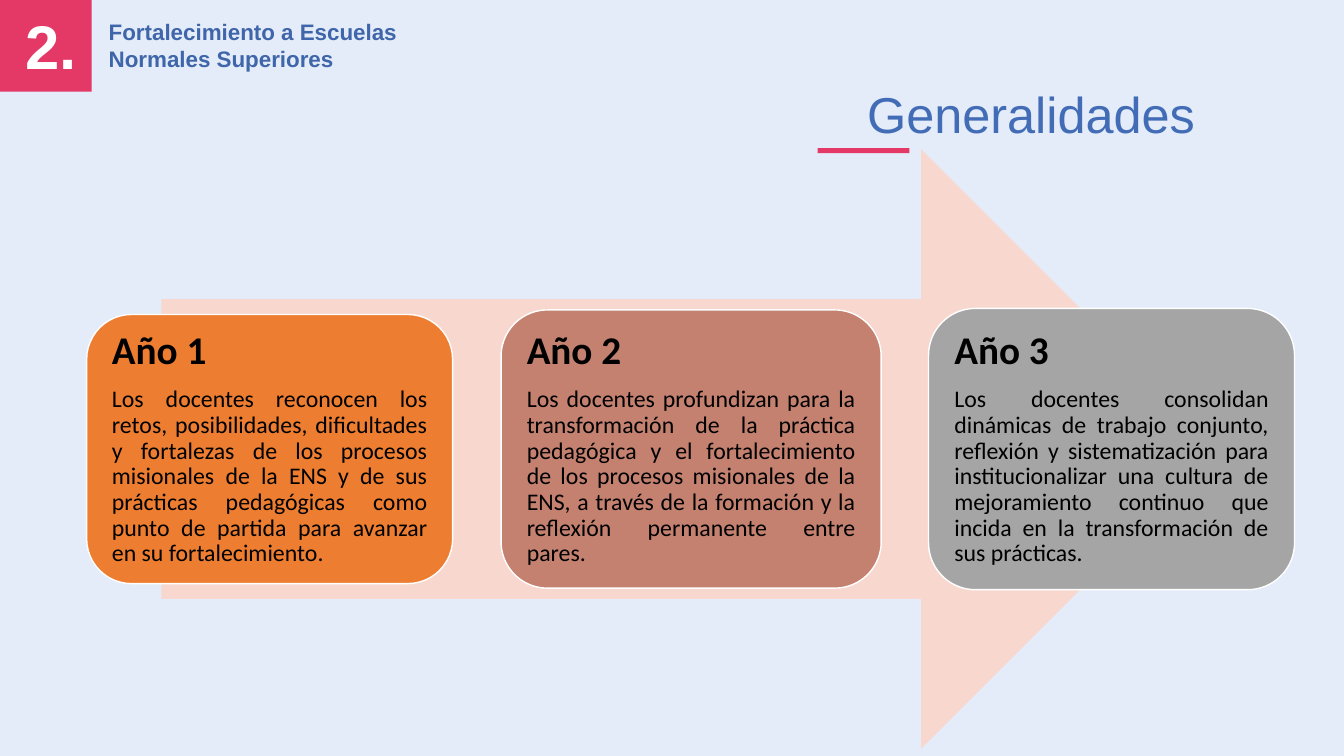
import pptx
import pptx.util
import pptx.dml.color
import pptx.enum.shapes
import pptx.enum.text

Inches, Pt = pptx.util.Inches, pptx.util.Pt
RGBColor = pptx.dml.color.RGBColor
Shape = pptx.enum.shapes.MSO_SHAPE
Align = pptx.enum.text.PP_ALIGN
Anchor = pptx.enum.text.MSO_ANCHOR

SKY = RGBColor(0xE3, 0xEC, 0xF8)
PINK = RGBColor(0xE4, 0x38, 0x66)
BLUE = RGBColor(0x43, 0x6C, 0xB7)
NAVY = RGBColor(0x3F, 0x65, 0xAA)
PEACH = RGBColor(0xF8, 0xD7, 0xCE)
ORANGE = RGBColor(0xED, 0x7D, 0x31)
CLAY = RGBColor(0xC4, 0x81, 0x70)
GREY = RGBColor(0xA5, 0xA5, 0xA5)
WHITE = RGBColor(0xFF, 0xFF, 0xFF)
BLACK = RGBColor(0, 0, 0)

TITLE = "Generalidades"
NUMBER = "2."
TOPIC = "Fortalecimiento a Escuelas Normales Superiores"
# heading, body, fill, left, width, height
YEARS = [
    ("Año 1",
     "Los docentes reconocen los retos, posibilidades, dificultades y "
     "fortalezas de los procesos misionales de la ENS y de sus prácticas "
     "pedagógicas como punto de partida para avanzar en su fortalecimiento.",
     ORANGE, 0.86, 3.63, 2.67),
    ("Año 2",
     "Los docentes profundizan para la transformación de la práctica "
     "pedagógica y el fortalecimiento de los procesos misionales de la ENS, "
     "a través de la formación y la reflexión permanente entre pares.",
     CLAY, 4.97, 3.77, 2.76),
    ("Año 3",
     "Los docentes consolidan dinámicas de trabajo conjunto, reflexión y "
     "sistematización para institucionalizar una cultura de mejoramiento "
     "continuo que incida en la transformación de sus prácticas.",
     GREY, 9.21, 3.63, 2.79),
]
ARROW = (1.6, 1.48, 10.51, 5.95)
MIDDLE = ARROW[1] + ARROW[3] / 2


def style(par, name, size, color, bold=False):
    font = par.font
    font.name, font.size, font.bold = name, Pt(size), bold
    font.color.rgb = color


def draw(slide, kind, box, fill):
    shape = slide.shapes.add_shape(kind, *map(Inches, box))
    shape.shadow.inherit = False
    shape.fill.solid()
    shape.fill.fore_color.rgb = fill
    shape.line.fill.background()
    return shape


def label(slide, box, text, size, color):
    frame = slide.shapes.add_textbox(*map(Inches, box)).text_frame
    frame.word_wrap = True
    frame.text = text
    style(frame.paragraphs[0], "Arial", size, color, True)


def card(slide, head, body, fill, left, width, height):
    """Draw one year, centred on the arrow's axis."""
    box = (left, MIDDLE - height / 2, width, height)
    shape = draw(slide, Shape.ROUNDED_RECTANGLE, box, fill)
    shape.line.color.rgb = WHITE
    shape.line.width = Pt(1)
    frame = shape.text_frame
    frame.word_wrap = True
    frame.vertical_anchor = Anchor.MIDDLE
    frame.margin_left = frame.margin_right = Inches(0.12)
    frame.margin_top = frame.margin_bottom = Inches(0.12)
    frame.text = head + "\n" + body
    first, second = frame.paragraphs
    style(first, "Calibri", 28, BLACK, True)
    style(second, "Calibri", 17, BLACK)
    first.space_after = Pt(9.8)
    for par in frame.paragraphs:
        par.alignment = Align.JUSTIFY
        par.line_spacing = 0.9


def main():
    deck = pptx.Presentation()
    deck.slide_width, deck.slide_height = Inches(13.33), Inches(7.5)
    slide = deck.slides.add_slide(deck.slide_layouts[5])
    slide.background.fill.solid()
    slide.background.fill.fore_color.rgb = SKY

    draw(slide, Shape.RECTANGLE, (0, 0, 0.91, 0.91), PINK)
    label(slide, (0.15, 0.03, 0.76, 0.84), NUMBER, 44, WHITE)
    label(slide, (0.98, 0.13, 3.52, 0.64), TOPIC, 16, NAVY)

    title = slide.shapes.title
    title.left, title.top = Inches(8.5), Inches(0.77)
    title.width, title.height = Inches(4.49), Inches(0.71)
    title.text = TITLE
    title.text_frame.vertical_anchor = Anchor.TOP
    par = title.text_frame.paragraphs[0]
    par.alignment = Align.LEFT
    style(par, "Arial", 36, BLUE)
    draw(slide, Shape.RECTANGLE, (8.11, 1.47, 0.91, 0.05), PINK)

    draw(slide, Shape.RIGHT_ARROW, ARROW, PEACH)
    for year in YEARS:
        card(slide, *year)
    deck.save("out.pptx")


if __name__ == "__main__":
    main()
